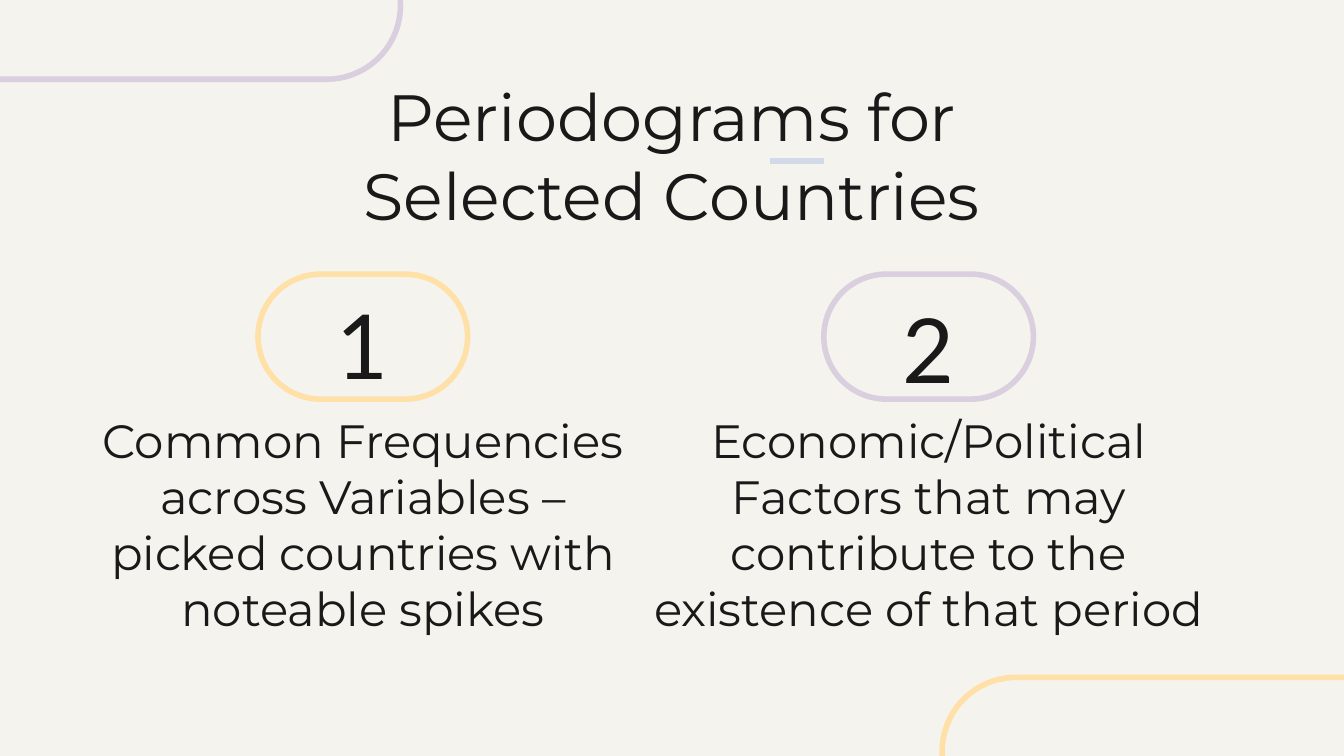
from dataclasses import dataclass

from pptx import Presentation
from pptx.dml.color import RGBColor
from pptx.enum.shapes import MSO_CONNECTOR as Connector, MSO_SHAPE as Preset
from pptx.enum.text import MSO_ANCHOR as Anchor, MSO_AUTO_SIZE as AutoSize, PP_ALIGN as Align
from pptx.oxml.ns import qn
from pptx.slide import Slide
from pptx.text.text import TextFrame
from pptx.util import Inches, Pt

# Square grid on a 16:9 slide: 100 columns by 56.25 rows
COLUMNS, ROWS = 100, 56.25
CELL = Inches(10) / COLUMNS


def cells(count: float) -> int:
    return round(count * CELL)


@dataclass(frozen=True)
class Theme:
    paper: str = "F5F3ED"
    ink: str = "191919"
    lilac: str = "D9CFDE"
    yellow: str = "FFE0A7"
    blue: str = "D2DAE9"
    text_font: str = "Montserrat"
    number_font: str = "Lato"
    title_size: int = 35
    body_size: int = 25
    number_size: int = 48
    stroke: int = 3


@dataclass(frozen=True)
class Box:
    column: float
    row: float
    width: float
    height: float

    def emu(self) -> tuple[int, ...]:
        return tuple(map(cells, (self.column, self.row, self.width, self.height)))


@dataclass(frozen=True)
class Topic:
    number: str
    message: str
    color: str
    center: float
    body_width: float
    body_height: float
    number_row: float

    def centered(self, row: float, width: float, height: float) -> Box:
        return Box(self.center - width / 2, row, width, height)


THEME = Theme()
BODY_BOTTOM = 48.3
TOPICS = (
    Topic("1", "Common Frequencies across Variables – picked countries with noteable spikes",
          THEME.yellow, 27, 41.6, 19.5, 20.4),
    Topic("2", "Economic/Political Factors that may contribute to the existence of that period",
          THEME.lilac, 69.1, 45.6, 17.3, 20.7),
)
CORNERS = (
    (Box(-14.3, -5.1, 44.1, 11), THEME.lilac),
    (Box(70.1, 50.4, 44.1, 11), THEME.yellow),
)


def place(shape, box: Box) -> None:
    shape.left, shape.top, shape.width, shape.height = box.emu()


def draw_pill(slide: Slide, box: Box, color: str) -> None:
    pill = slide.shapes.add_shape(Preset.ROUNDED_RECTANGLE, *box.emu())
    pill.adjustments[0] = 0.5
    pill.shadow.inherit = False
    pill.fill.background()
    pill.line.color.rgb = RGBColor.from_string(color)
    pill.line.width = Pt(THEME.stroke)


def write(frame: TextFrame, words: str, font: str, size: int, anchor: Anchor) -> None:
    frame.text = words
    frame.word_wrap = True
    frame.auto_size = AutoSize.NONE
    frame.vertical_anchor = anchor
    frame.margin_left = frame.margin_right = cells(1)
    frame.margin_top = frame.margin_bottom = cells(1)
    for paragraph in frame.paragraphs:
        paragraph.alignment = Align.CENTER
        paragraph.space_before = Pt(0)
        for run in paragraph.runs:
            run.font.name = font
            run.font.size = Pt(size)
            run.font.color.rgb = RGBColor.from_string(THEME.ink)


def remove_bullets(frame: TextFrame) -> None:
    for paragraph in frame.paragraphs:
        properties = paragraph._p.get_or_add_pPr()
        properties.set("marL", "0")
        properties.set("indent", "0")
        properties.append(properties.makeelement(qn("a:buNone"), {}))


def draw_dash(slide: Slide, start: float, end: float, row: float) -> None:
    dash = slide.shapes.add_connector(
        Connector.STRAIGHT, cells(start), cells(row), cells(end), cells(row))
    dash.line.color.rgb = RGBColor.from_string(THEME.blue)
    dash.line.width = Pt(THEME.stroke)
    properties = dash._element.spPr
    properties.append(properties.makeelement(qn("a:effectLst"), {}))


def draw_topic(slide: Slide, topic: Topic, body) -> None:
    draw_pill(slide, topic.centered(20.4, 15.6, 9.3), topic.color)

    place(body, topic.centered(BODY_BOTTOM - topic.body_height,
                               topic.body_width, topic.body_height))
    write(body.text_frame, topic.message, THEME.text_font, THEME.body_size, Anchor.BOTTOM)
    remove_bullets(body.text_frame)

    number = slide.shapes.add_textbox(*topic.centered(topic.number_row, 9.9, 10.2).emu())
    write(number.text_frame, topic.number, THEME.number_font, THEME.number_size, Anchor.BOTTOM)


def main() -> None:
    deck = Presentation()
    deck.slide_width, deck.slide_height = cells(COLUMNS), cells(ROWS)
    slide = deck.slides.add_slide(deck.slide_layouts.get_by_name("Two Content"))
    slide.background.fill.solid()
    slide.background.fill.fore_color.rgb = RGBColor.from_string(THEME.paper)

    # Corner outlines
    for box, color in CORNERS:
        draw_pill(slide, box, color)

    # Title and its accent
    title, *bodies = slide.placeholders
    place(title, Box(21.1, 4.7, 57.8, 6.3))
    write(title.text_frame, "Periodograms for Selected Countries",
          THEME.text_font, THEME.title_size, Anchor.TOP)
    draw_dash(slide, 57.3, 61.3, 12)

    # Numbered topics
    for topic, body in zip(TOPICS, bodies):
        draw_topic(slide, topic, body)

    deck.save("out.pptx")


if __name__ == "__main__":
    main()
